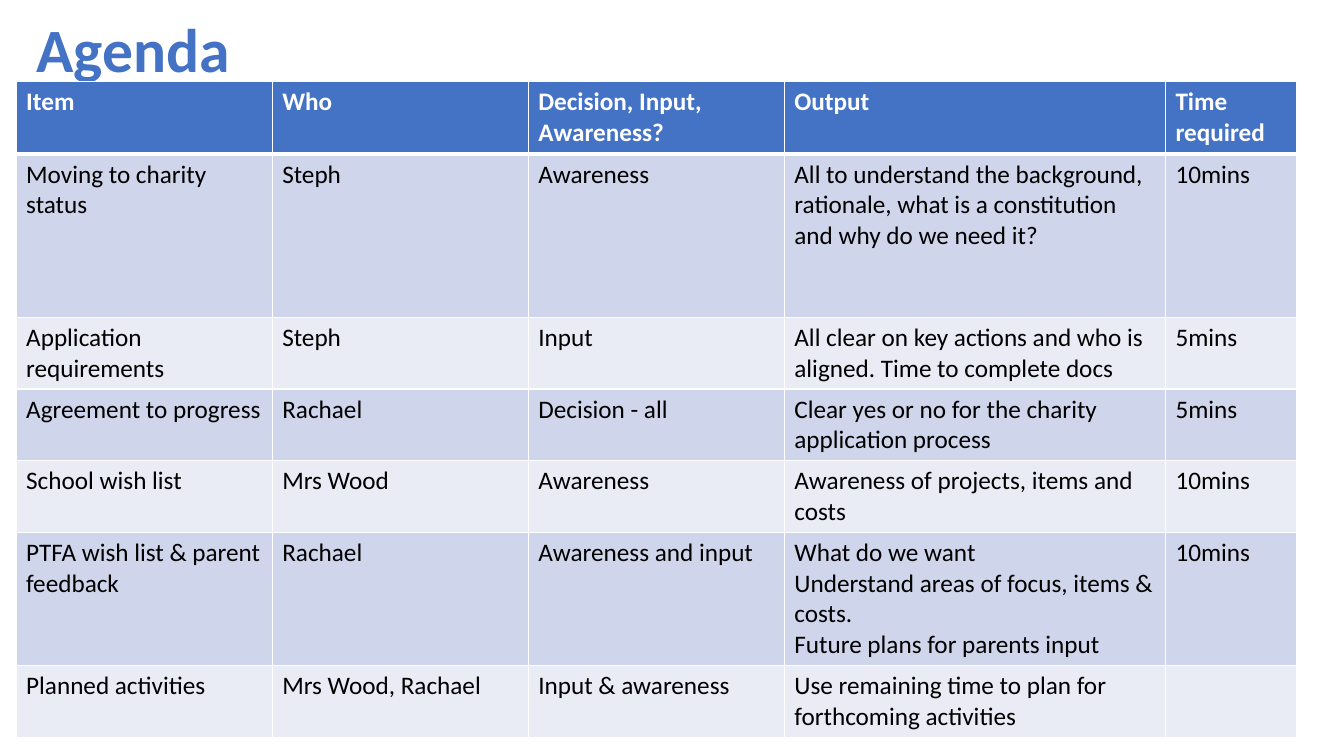
from dataclasses import dataclass

from lxml.etree import SubElement
from pptx import Presentation
from pptx.dml.color import RGBColor
from pptx.enum.text import MSO_ANCHOR, PP_ALIGN
from pptx.oxml.ns import qn
from pptx.util import Inches, Pt


@dataclass(frozen=True)
class Theme:
    font: str = "Calibri"
    accent: str = "4472C4"
    dark: str = "000000"
    light: str = "FFFFFF"
    bands: tuple = ("CFD5EA", "E9EBF5")
    title: int = 44
    body: int = 18
    rule: int = 1
    thick: int = 3


THEME = Theme()
WIDTHS = (2.54, 2.54, 2.54, 3.78, 1.3)
HEIGHTS = (0.72, 1.62, 0.71, 0.71, 0.71, 1.01, 0.71)
AGENDA = (
    ("Item", "Who", "Decision, Input, Awareness?", "Output", "Time required"),
    ("Moving to charity status", "Steph", "Awareness",
     "All to understand the background, rationale, what is a constitution "
     "and why do we need it?", "10mins"),
    ("Application requirements", "Steph", "Input",
     "All clear on key actions and who is aligned. Time to complete docs",
     "5mins"),
    ("Agreement to progress", "Rachael", "Decision - all",
     "Clear yes or no for the charity application process", "5mins"),
    ("School wish list", "Mrs Wood", "Awareness",
     "Awareness of projects, items and costs", "10mins"),
    ("PTFA wish list & parent feedback", "Rachael", "Awareness and input",
     "What do we want\nUnderstand areas of focus, items & costs.\n"
     "Future plans for parents input", "10mins"),
    ("Planned activities", "Mrs Wood, Rachael", "Input & awareness",
     "Use remaining time to plan for forthcoming activities", ""),
)


def style(font, size, color, bold):
    font.name = THEME.font
    font.size = Pt(size)
    font.bold = bold
    font.color.rgb = RGBColor.from_string(color)


def write(frame, text, size, color, bold):
    """Fill the frame with one paragraph for each line of text."""
    for i, line in enumerate(text.split("\n")):
        para = frame.paragraphs[0] if i == 0 else frame.add_paragraph()
        if line:
            run = para.add_run()
            run.text = line
            style(run.font, size, color, bold)
        else:
            style(para.font, size, color, bold)


def add_rules(cell, top, bottom):
    """Draw the four cell borders; call before the fill is set."""
    props = cell._tc.get_or_add_tcPr()
    sides = {"L": THEME.rule, "R": THEME.rule, "T": top, "B": bottom}
    for side, width in sides.items():
        line = SubElement(props, qn(f"a:ln{side}"), w=str(Pt(width)))
        fill = SubElement(line, qn("a:solidFill"))
        SubElement(fill, qn("a:srgbClr"), val=THEME.light)


def add_title(slide, text, left, top, width, height):
    title = slide.shapes.title
    title.left, title.top = Inches(left), Inches(top)
    title.width, title.height = Inches(width), Inches(height)
    frame = title.text_frame
    frame.word_wrap = True
    frame.vertical_anchor = MSO_ANCHOR.MIDDLE
    write(frame, text, THEME.title, THEME.accent, True)
    frame.paragraphs[0].alignment = PP_ALIGN.LEFT
    frame.paragraphs[0].line_spacing = 0.9


def add_agenda(slide, rows, left, top):
    table = slide.shapes.add_table(
        len(rows), len(WIDTHS), Inches(left), Inches(top),
        Inches(sum(WIDTHS)), Inches(sum(HEIGHTS))).table
    for column, width in zip(table.columns, WIDTHS):
        column.width = Inches(width)
    for r, (row, height) in enumerate(zip(rows, HEIGHTS)):
        table.rows[r].height = Inches(height)
        head = r == 0
        back = THEME.accent if head else THEME.bands[(r - 1) % 2]
        ink = THEME.light if head else THEME.dark
        for c, text in enumerate(row):
            cell = table.cell(r, c)
            add_rules(cell, THEME.thick if r == 1 else THEME.rule,
                      THEME.thick if head else THEME.rule)
            cell.fill.solid()
            cell.fill.fore_color.rgb = RGBColor.from_string(back)
            write(cell.text_frame, text, THEME.body, ink, head)


def main():
    deck = Presentation()
    deck.slide_width, deck.slide_height = Inches(13.33), Inches(7.5)
    slide = deck.slides.add_slide(deck.slide_layouts[5])
    add_title(slide, "Agenda", 0.26, 0, 11.39, 1.04)
    add_agenda(slide, AGENDA, 0.16, 0.81)
    deck.save("out.pptx")


if __name__ == "__main__":
    main()
